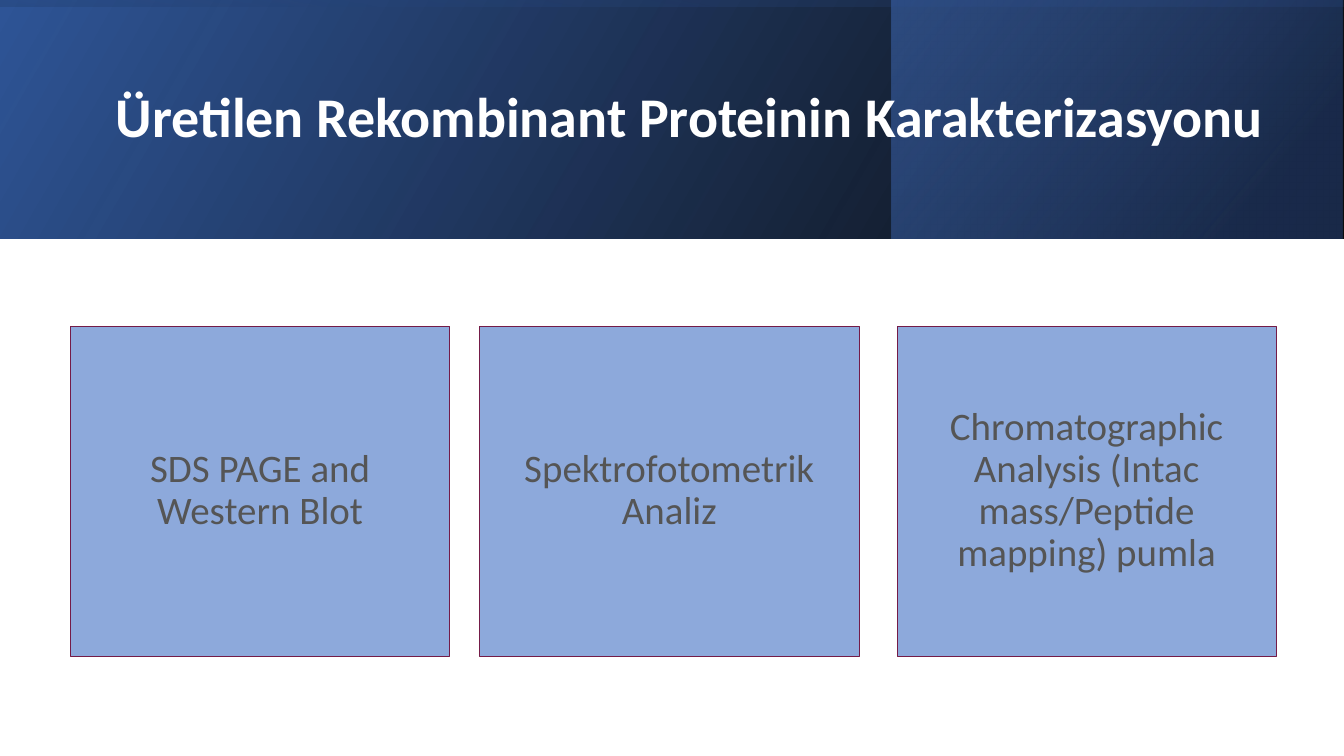
from dataclasses import dataclass

from lxml import etree
from pptx import Presentation, util as u
from pptx.dml.color import RGBColor
from pptx.enum import shapes, text
from pptx.oxml.ns import qn


@dataclass(frozen=True)
class Theme:
    font: str = "Calibri"
    title_size: float = 40
    card_size: float = 27.8
    white: str = "FFFFFF"
    black: str = "000000"
    navy: str = "203864"
    blue: str = "2F5597"
    sky: str = "4472C4"
    card: str = "8DA9DB"
    border: str = "741B47"
    ink: str = "555555"


class Deck:
    def __init__(self, theme, cols, rows):
        self.theme = theme
        self.prs = Presentation()
        self.prs.slide_width = u.Inches(13.33)
        self.prs.slide_height = u.Inches(7.5)
        self.cell_w = self.prs.slide_width / cols
        self.cell_h = self.prs.slide_height / rows
        self.s = self.prs.slides.add_slide(self.prs.slide_layouts[6])

    def place(self, col, row, cols, rows):
        return [round(n) for n in (col * self.cell_w, row * self.cell_h,
                                   cols * self.cell_w, rows * self.cell_h)]

    def rect(self, box):
        sp = self.s.shapes.add_shape(shapes.MSO_SHAPE.RECTANGLE, *box)
        sp.shadow.inherit = False
        return sp

    def band(self, at, stops, angle, turn=0):
        x, y, w, h = self.place(*at)
        if turn:
            x, y, w, h = x + (w - h) // 2, y + (h - w) // 2, h, w
        sp = self.rect((x, y, w, h))
        sp.rotation = turn
        sp.line.fill.background()
        pr = sp._element.spPr
        pr.find(qn("a:xfrm")).set("flipH", "1")
        grad = etree.Element(qn("a:gradFill"), rotWithShape="1")
        gs_list = etree.SubElement(grad, qn("a:gsLst"))
        for pos, color, alpha in stops:
            gs = etree.SubElement(gs_list, qn("a:gs"), pos=str(pos * 1000))
            clr = etree.SubElement(gs, qn("a:srgbClr"), val=color)
            etree.SubElement(clr, qn("a:alpha"), val=str(alpha * 1000))
        etree.SubElement(grad, qn("a:lin"), ang=str(angle * 60000), scaled="0")
        pr.find(qn("a:prstGeom")).addnext(grad)

    def label(self, sp, words, size, color, bold=False, inset=None, **paragraph):
        tf = sp.text_frame
        frame = {"word_wrap": True, "vertical_anchor": text.MSO_ANCHOR.MIDDLE}
        if inset:
            frame.update({f"margin_{side}": u.Inches(inset)
                          for side in ("left", "top", "right", "bottom")})
        p = tf.paragraphs[0]
        r = p.add_run()
        r.text = words
        r.font.color.rgb = RGBColor.from_string(color)
        font = {"name": self.theme.font, "size": u.Pt(size), "bold": bold}
        for target, values in ((tf, frame), (p, {"line_spacing": 0.9, **paragraph}),
                               (r.font, font)):
            for name, value in values.items():
                setattr(target, name, value)

    def title(self, at, words):
        sp = self.s.shapes.add_textbox(*self.place(*at))
        self.label(sp, words, self.theme.title_size, self.theme.white, bold=True,
                   alignment=text.PP_ALIGN.LEFT)

    def card(self, at, words):
        sp = self.rect(self.place(*at))
        sp.fill.solid()
        sp.fill.fore_color.rgb = RGBColor.from_string(self.theme.card)
        sp.line.color.rgb = RGBColor.from_string(self.theme.border)
        sp.line.width = u.Pt(0.75)
        self.label(sp, words, self.theme.card_size, self.theme.ink, inset=0.12,
                   alignment=text.PP_ALIGN.CENTER, space_after=u.Pt(6))


def main():
    t = Theme()
    deck = Deck(t, cols=40, rows=22.5)
    header = (0, 0, 40, 7.11)
    deck.band(header, [(0, t.black, 96), (100, t.blue, 100)], 330)
    deck.band((26.53, 0, 13.44, 7.11), [(19, t.navy, 68), (100, t.sky, 48)], 320)
    deck.band(header, [(23, t.blue, 16), (99, t.black, 45)], 350, turn=270)
    deck.title((3.15, 0.96, 34.83, 5.16),
               "Üretilen Rekombinant Proteinin Karakterizasyonu")
    cards = {
        2.1: "SDS PAGE and Western Blot",
        14.28: "Spektrofotometrik Analiz",
        26.7: "Chromatographic Analysis (Intac mass/Peptide mapping) pumla",
    }
    for col, words in cards.items():
        deck.card((col, 9.71, 11.29, 9.82), words)
    deck.prs.save("out.pptx")


if __name__ == "__main__":
    main()
